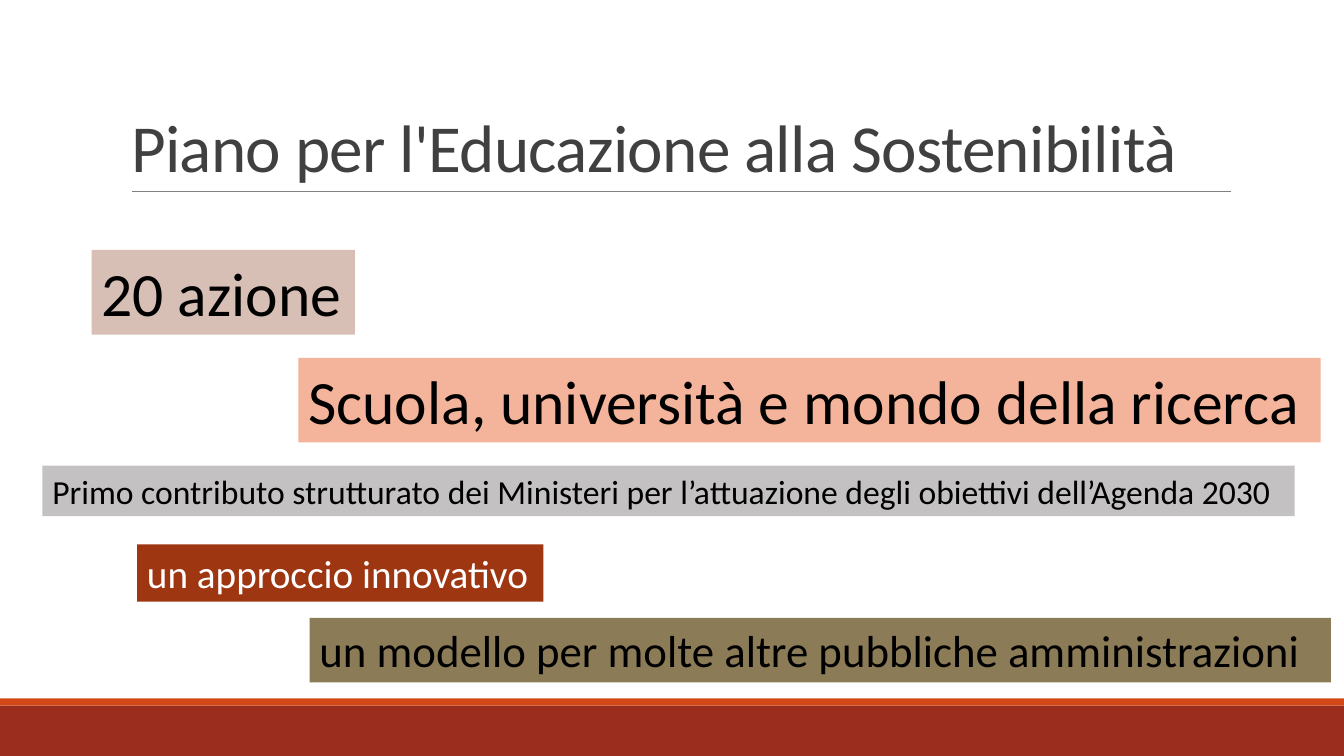
from pptx import Presentation
from pptx.dml.color import RGBColor
from pptx.enum import shapes, text
from pptx.oxml.ns import qn
from pptx.util import Inches, Pt

COLORS = {
    "title": "404040", "rule": "808080", "footer": "9B2D1F", "stripe": "D34817",
    "black": "000000", "white": "FFFFFF", "rose": "D8BFB6", "gray": "C3C1C1",
    "salmon": "F4B39B", "rust": "9E3611", "olive": "8B7B57",
}
FONT = "Calibri"
TITLE = "Piano per l'Educazione alla Sostenibilità"
# color, left, top, width, height
BANDS = [
    ("footer", 0, 7, 13.33, 0.5),
    ("stripe", 0, 6.93, 13.33, 0.07),
]
# wording, size, text color, fill, left, top, width, height
LABELS = [
    ("20 azione", 44, "black", "rose", 0.91, 2.48, 2.61, 0.84),
    ("Primo contributo strutturato dei Ministeri per l’attuazione degli obiettivi "
     "dell’Agenda 2030", 24, "black", "gray", 0.42, 4.62, 12.42, 0.5),
    ("Scuola, università e mondo della ricerca", 44, "black", "salmon",
     2.96, 3.55, 10.14, 0.84),
    ("un approccio innovativo", 28, "white", "rust", 1.36, 5.4, 4.03, 0.57),
    ("un modello per molte altre pubbliche amministrazioni ", 32, "black", "olive",
     3.07, 6.13, 10.13, 0.64),
]


def rgb(name):
    return RGBColor.from_string(COLORS[name])


def write(frame, wording, size, color):
    """Put one formatted line in the frame and return its run."""
    frame.text = wording
    run = frame.paragraphs[0].runs[0]
    run.font.name = FONT
    run.font.size = Pt(size)
    run.font.color.rgb = rgb(color)
    return run


def fill(shape, color):
    shape.fill.solid()
    shape.fill.fore_color.rgb = rgb(color)


def main():
    deck = Presentation()
    deck.slide_width, deck.slide_height = Inches(13.33), Inches(7.5)
    slide = deck.slides.add_slide(deck.slide_layouts[5])

    for color, *box in BANDS:
        band = slide.shapes.add_shape(shapes.MSO_SHAPE.RECTANGLE, *map(Inches, box))
        band.shadow.inherit = False
        fill(band, color)
        band.line.fill.background()

    rule = slide.shapes.add_connector(
        shapes.MSO_CONNECTOR.STRAIGHT, *map(Inches, (1.31, 1.9, 12.21, 1.9)))
    rule.line.color.rgb = rgb("rule")
    rule.line.width = Pt(0.5)
    properties = rule._element.spPr
    properties.append(properties.makeelement(qn("a:effectLst"), {}))

    title = slide.shapes.title
    title.left, title.top, title.width, title.height = map(Inches, (1.2, 0.31, 11, 1.59))
    frame = title.text_frame
    run = write(frame, TITLE, 48, "title")
    run.font._element.set("spc", "-50")
    frame.word_wrap = True
    frame.auto_size = text.MSO_AUTO_SIZE.NONE
    frame.vertical_anchor = text.MSO_ANCHOR.BOTTOM
    frame.paragraphs[0].alignment = text.PP_ALIGN.LEFT
    frame.paragraphs[0].line_spacing = 0.85

    for wording, size, color, background, *box in LABELS:
        label = slide.shapes.add_textbox(*map(Inches, box))
        fill(label, background)
        write(label.text_frame, wording, size, color)
        label.text_frame.word_wrap = False
        label.text_frame.auto_size = text.MSO_AUTO_SIZE.SHAPE_TO_FIT_TEXT

    deck.save("out.pptx")


if __name__ == "__main__":
    main()
